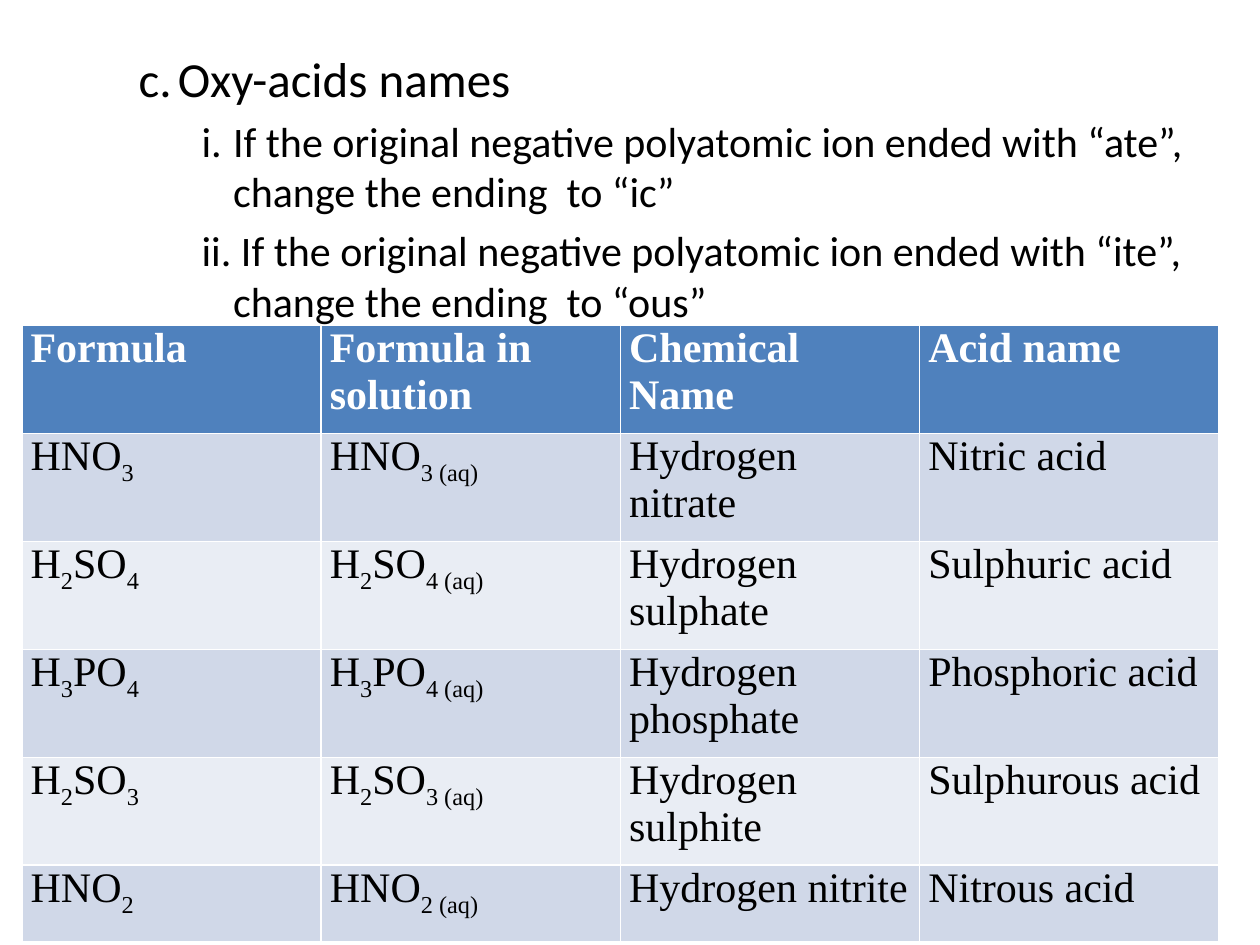
from dataclasses import dataclass

from pptx import Presentation
from pptx.dml.color import RGBColor as RGB
from pptx.enum.text import MSO_AUTO_SIZE as AutoSize
from pptx.util import Pt


@dataclass(frozen=True)
class Theme:
    body_font: str = "Calibri"
    table_font: str = "Times New Roman"
    heading_size: int = 28
    text_size: int = 24
    text: RGB = RGB(0x00, 0x00, 0x00)
    header_text: RGB = RGB(0xFF, 0xFF, 0xFF)
    header_fill: RGB = RGB(0x4F, 0x81, 0xBD)
    bands: tuple = (RGB(0xD0, 0xD8, 0xE8), RGB(0xE9, 0xED, 0xF4))


RULES = [
    # level, left margin, hanging indent, text
    (1, 58.5, -22.5, "c.\tOxy-acids names"),
    (2, 90, -18, "i.\tIf the original negative polyatomic ion ended with “ate”, "
                 "change the ending  to “ic”"),
    (2, 90, -18, "ii. If the original negative polyatomic ion ended with “ite”, "
                 "change the ending  to “ous”"),
]
HEADERS = ["Formula", "Formula in solution", "Chemical Name", "Acid name"]
ACIDS = [
    ("HNO_3", "Hydrogen nitrate", "Nitric acid"),
    ("H_2_SO_4", "Hydrogen sulphate", "Sulphuric acid"),
    ("H_3_PO_4", "Hydrogen phosphate", "Phosphoric acid"),
    ("H_2_SO_3", "Hydrogen sulphite", "Sulphurous acid"),
    ("HNO_2", "Hydrogen nitrite", "Nitrous acid"),
]
ROW_HEIGHTS = [61.7] * 5 + [44]


def set_values(target, values):
    for name, value in values.items():
        setattr(target, name, value)


class SlideBuilder:
    def __init__(self, slide, theme):
        self.slide = slide
        self.theme = theme

    def add_run(self, paragraph, text, font, size, color, bold=False):
        run = paragraph.add_run()
        run.text = text
        set_values(run.font, {"name": font, "size": Pt(size), "bold": bold})
        run.font.color.rgb = color
        return run

    def fill_body(self, left, top, width, height, items):
        theme = self.theme
        body = self.slide.placeholders[1]
        set_values(body, {"left": Pt(left), "top": Pt(top),
                          "width": Pt(width), "height": Pt(height)})
        frame = body.text_frame
        set_values(frame, {"word_wrap": True, "auto_size": AutoSize.NONE})
        for index, (level, margin, indent, text) in enumerate(items):
            paragraph = frame.add_paragraph() if index else frame.paragraphs[0]
            paragraph.level = level
            properties = paragraph._p.get_or_add_pPr()
            properties.set("marL", str(Pt(margin)))
            properties.set("indent", str(Pt(indent)))
            properties.makeelement
            bullet = properties.makeelement(
                "{http://schemas.openxmlformats.org/drawingml/2006/main}buNone", {})
            properties.append(bullet)
            size = theme.heading_size if level == 1 else theme.text_size
            self.add_run(paragraph, text, theme.body_font, size, theme.text)

    def write_cell(self, cell, text, fill, color, bold):
        """Fill a cell; underscores switch subscript on and off."""
        set_values(cell, {"margin_left": Pt(5), "margin_right": Pt(5),
                          "margin_top": 0, "margin_bottom": 0})
        cell.fill.solid()
        cell.fill.fore_color.rgb = fill
        paragraph = cell.text_frame.paragraphs[0]
        for index, part in enumerate(text.split("_")):
            run = self.add_run(paragraph, part, self.theme.table_font,
                               self.theme.text_size, color, bold)
            if index % 2:
                run.font._element.set("baseline", "-25000")

    def add_table(self, left, top, width, row_heights, rows):
        theme = self.theme
        frame = self.slide.shapes.add_table(
            len(rows), len(rows[0]), Pt(left), Pt(top), Pt(width), Pt(sum(row_heights)))
        table = frame.table
        for row, height in zip(table.rows, row_heights):
            row.height = Pt(height)
        for row_index, texts in enumerate(rows):
            header = row_index == 0
            fill = theme.header_fill if header else theme.bands[(row_index - 1) % 2]
            color = theme.header_text if header else theme.text
            for column_index, text in enumerate(texts):
                cell = table.cell(row_index, column_index)
                self.write_cell(cell, text, fill, color, header)

    def remove_title(self):
        title = self.slide.shapes.title._element
        title.getparent().remove(title)


def main():
    presentation = Presentation()
    set_values(presentation, {"slide_width": Pt(720), "slide_height": Pt(540)})
    slide = presentation.slides.add_slide(presentation.slide_layouts[1])
    builder = SlideBuilder(slide, Theme())
    builder.remove_title()
    builder.fill_body(36, 24, 648, 162, RULES)
    rows = [HEADERS] + [(formula, f"{formula} (aq)", chemical, acid)
                        for formula, chemical, acid in ACIDS]
    builder.add_table(12.5, 186, 684, ROW_HEIGHTS, rows)
    presentation.save("out.pptx")


if __name__ == "__main__":
    main()
